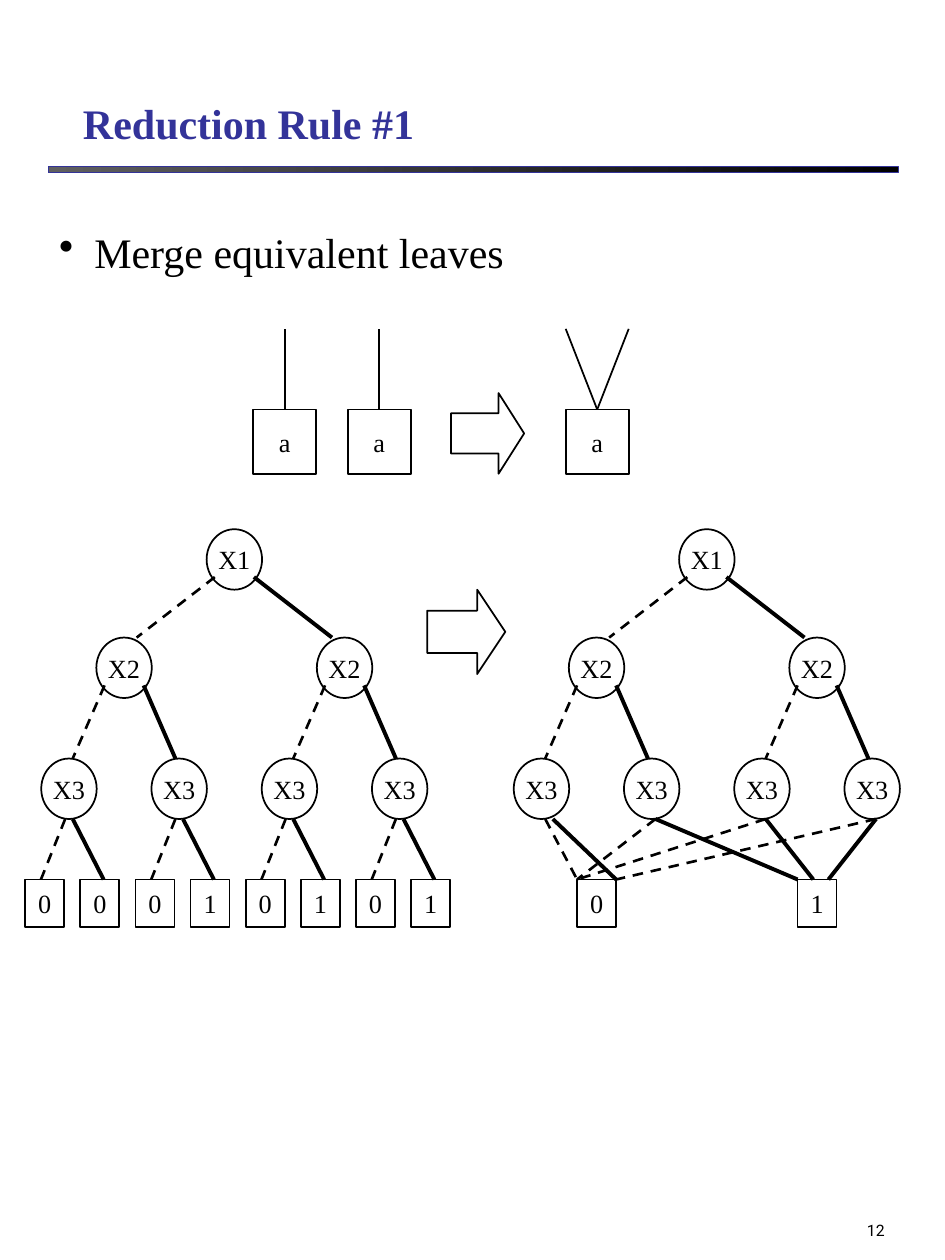
from pptx import Presentation
from pptx.dml.color import RGBColor
from pptx.enum.dml import MSO_LINE
from pptx.enum.shapes import MSO_CONNECTOR, MSO_SHAPE
from pptx.enum.text import MSO_ANCHOR, PP_ALIGN
from pptx.oxml.ns import qn
from pptx.util import Inches, Pt
from lxml.etree import SubElement

BLACK = RGBColor(0x00, 0x00, 0x00)
GRAY = RGBColor(0x5F, 0x5F, 0x5F)
INDIGO = RGBColor(0x33, 0x33, 0x99)
SERIF = "Times New Roman"

WIDTH, HEIGHT = 7.5, 10
COLUMN = 0.4375                   # a tree is eight columns wide
ROWS = (0, 0.86, 1.82, 2.78)      # tops of the tree levels
NODE_WIDTH, NODE_HEIGHT = 0.44, 0.48
LEAF_WIDTH, LEAF_HEIGHT = 0.31, 0.38
NODE_SHOULDER = 0.38              # height at which upper edges leave a node


def style_font(font, size, color=BLACK, name=SERIF, bold=False):
    font.size = Pt(size)
    font.name = name
    font.bold = bold
    font.color.rgb = color


def add_text(slide, box, text, size, anchor=MSO_ANCHOR.TOP, **font_style):
    shape = slide.shapes.add_textbox(*map(Inches, box))
    text_frame = shape.text_frame
    text_frame.word_wrap = True
    text_frame.vertical_anchor = anchor
    text_frame.text = text
    paragraph = text_frame.paragraphs[0]
    style_font(paragraph.runs[0].font, size, **font_style)
    return paragraph


def add_outline(shapes, kind, box, text=""):
    shape = shapes.add_shape(kind, *map(Inches, box))
    shape.shadow.inherit = False
    shape.fill.background()
    shape.line.color.rgb = BLACK
    shape.line.width = Pt(1)
    if text:
        text_frame = shape.text_frame
        text_frame.word_wrap = False
        text_frame.vertical_anchor = MSO_ANCHOR.MIDDLE
        text_frame.text = text
        paragraph = text_frame.paragraphs[0]
        paragraph.alignment = PP_ALIGN.CENTER
        style_font(paragraph.runs[0].font, 15)
    return shape


def add_arrow(shapes, box, head):
    arrow = add_outline(shapes, MSO_SHAPE.RIGHT_ARROW, box)
    arrow.adjustments[0] = 0.5
    arrow.adjustments[1] = head


def add_line(shapes, start, end, width=1.0, dashed=False):
    line = shapes.add_connector(MSO_CONNECTOR.STRAIGHT, *map(Inches, (*start, *end)))
    line.line.color.rgb = BLACK
    line.line.width = Pt(width)
    if dashed:
        line.line.dash_style = MSO_LINE.DASH
    SubElement(line._element.spPr, qn("a:effectLst"))


def add_low_edge(shapes, start, end):
    add_line(shapes, start, end, 1.5, dashed=True)


def add_high_edge(shapes, start, end):
    add_line(shapes, start, end, 2.25)


def add_node(shapes, center, top, text):
    box = (center - NODE_WIDTH / 2, top, NODE_WIDTH, NODE_HEIGHT)
    add_outline(shapes, MSO_SHAPE.OVAL, box, text)


def add_leaf(shapes, center, top, text):
    box = (center - LEAF_WIDTH / 2, top, LEAF_WIDTH, LEAF_HEIGHT)
    add_outline(shapes, MSO_SHAPE.RECTANGLE, box, text)


def add_header(slide, left, top, width):
    # Title and gradient rule
    add_text(slide, (left + 0.18, top, width - 0.37, 0.63), "Reduction Rule #1", 24,
             MSO_ANCHOR.BOTTOM, color=INDIGO, bold=True)
    rule = slide.shapes.add_shape(
        MSO_SHAPE.RECTANGLE, *map(Inches, (left, top + 0.73, width, 0.05)))
    rule.shadow.inherit = False
    rule.fill.gradient()
    rule.fill.gradient_angle = 0
    for stop, color, position in zip(rule.fill.gradient_stops, (GRAY, BLACK), (0, 1)):
        stop.color.rgb = color
        stop.position = position
    rule.line.color.rgb = INDIGO
    rule.line.width = Pt(0.25)


def add_statement(slide, box):
    paragraph = add_text(slide, box, "Merge equivalent leaves", 24)
    properties = paragraph._p.get_or_add_pPr()
    properties.set("marL", str(Inches(0.28)))
    properties.set("indent", str(-Inches(0.28)))
    SubElement(properties, qn("a:buChar")).set("char", "•")


def add_rule_sketch(slide, left, top):
    # Two equal leaves become one
    shapes = slide.shapes.add_group_shape().shapes
    size, leaf_top = 0.5, top + 0.64
    for offset, line_ends in ((0, (0.5,)), (0.75, (0.5,)), (2.48, (0, 1))):
        leaf_left = left + offset
        add_outline(shapes, MSO_SHAPE.RECTANGLE, (leaf_left, leaf_top, size, 0.51), "a")
        for share in line_ends:
            add_line(shapes, (leaf_left + size / 2, leaf_top), (leaf_left + size * share, top))
    add_arrow(shapes, (left + 1.57, top + 0.51, 0.58, 0.64), 0.35)


def add_upper_tree(shapes, left, top):
    """Draw the three levels of variables and return the centers of the lowest."""
    levels = [[left + COLUMN * column for column in columns]
              for columns in ((4,), (2, 6), (1, 3, 5, 7))]
    tops = [top + row for row in ROWS]
    for depth, centers in enumerate(levels):
        for center in centers:
            add_node(shapes, center, tops[depth], f"X{depth + 1}")
    for depth, inset in ((0, 0.1), (1, 0.03)):
        start_y, end_y = tops[depth] + NODE_SHOULDER, tops[depth + 1]
        children = levels[depth + 1]
        for index, center in enumerate(levels[depth]):
            low, high = children[2 * index:2 * index + 2]
            add_low_edge(shapes, (center - 0.155, start_y), (low + inset, end_y))
            add_high_edge(shapes, (center + 0.155, start_y), (high - inset, end_y))
    return levels[-1]


def add_full_tree(slide, left, top, values):
    shapes = slide.shapes.add_group_shape().shapes
    parents = add_upper_tree(shapes, left, top)
    start_y, leaf_top = top + ROWS[2] + NODE_HEIGHT, top + ROWS[3]
    leaves = [left + COLUMN * (index + 0.56) for index in range(len(values))]
    for center, value in zip(leaves, values):
        add_leaf(shapes, center, leaf_top, value)
    for parent, low, high in zip(parents, leaves[::2], leaves[1::2]):
        add_low_edge(shapes, (parent - 0.03, start_y), (low - 0.03, leaf_top))
        add_high_edge(shapes, (parent + 0.03, start_y), (high + 0.03, leaf_top))


def add_merged_tree(slide, left, top):
    shapes = slide.shapes.add_group_shape().shapes
    parents = add_upper_tree(shapes, left, top)
    start_y, leaf_top = top + ROWS[2] + NODE_HEIGHT, top + ROWS[3]
    zero, one = left + 2 * COLUMN, left + 6 * COLUMN
    half = LEAF_WIDTH / 2
    add_leaf(shapes, zero, leaf_top, "0")
    add_leaf(shapes, one, leaf_top, "1")
    low_ends = (zero - half, zero - half, zero - half, zero + half)
    high_ends = (zero + half, one - half, one - 0.03, one + 0.09)
    high_shifts = (0.09, 0.03, 0.03, 0.03)
    for parent, low, high, shift in zip(parents, low_ends, high_ends, high_shifts):
        add_low_edge(shapes, (parent + 0.03, start_y), (low, leaf_top))
        add_high_edge(shapes, (parent + shift, start_y), (high, leaf_top))


def add_page_number(slide, box):
    paragraph = add_text(slide, box, "12", 9, MSO_ANCHOR.BOTTOM, name="Roboto")
    paragraph.alignment = PP_ALIGN.RIGHT


def main():
    presentation = Presentation()
    presentation.slide_width = Inches(WIDTH)
    presentation.slide_height = Inches(HEIGHT)
    slide = presentation.slides.add_slide(presentation.slide_layouts[6])

    add_header(slide, 0.38, 0.59, WIDTH * 0.9)
    add_statement(slide, (0.37, 1.75, WIDTH * 0.85, 0.5))
    add_rule_sketch(slide, 2.01, 2.61)
    add_full_tree(slide, 0.11, 4.2, "00010101")
    add_merged_tree(slide, 3.86, 4.2)
    add_arrow(slide.shapes, (3.39, 4.68, 0.62, 0.67), 0.36)
    add_page_number(slide, (5.56, 9.22, 1.56, 0.67))

    presentation.save("out.pptx")


if __name__ == "__main__":
    main()
